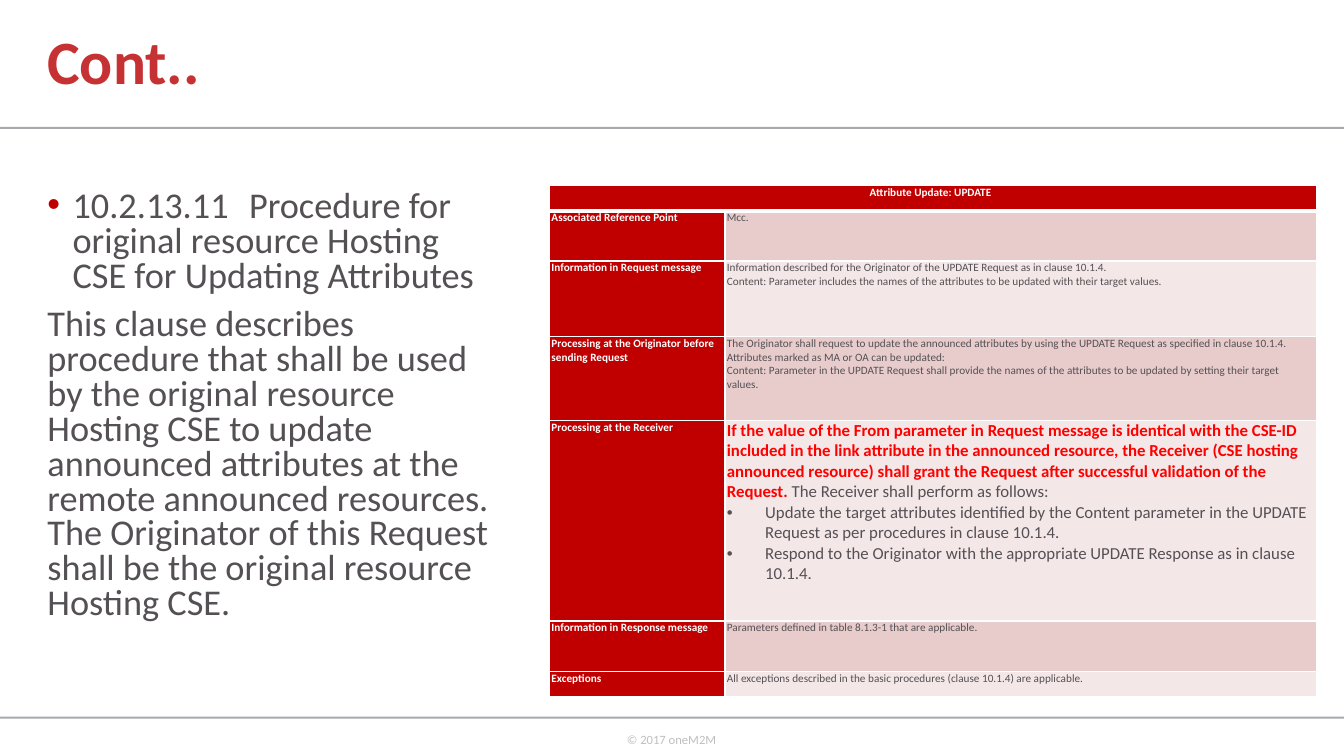
"""Build the slide on updating announced attributes."""
from lxml.etree import SubElement
from pptx import Presentation
from pptx.dml.color import RGBColor
from pptx.enum.shapes import MSO_SHAPE
from pptx.enum.text import MSO_ANCHOR, MSO_AUTO_SIZE, PP_ALIGN
from pptx.oxml import parse_xml
from pptx.oxml.ns import nsdecls, qn
from pptx.util import Inches, Pt

RED, GREY, WHITE, ALERT = "C00000", "545054", "FFFFFF", "FF0000"
BANDS = ["E8CCCC", "F4E7E7"]
TITLE = "Cont.."
BODY = [
    "10.2.13.11\tProcedure for original resource Hosting CSE for Updating Attributes",
    "This clause describes procedure that shall be used by the original resource Hosting CSE "
    "to update announced attributes at the remote announced resources. The Originator of this "
    "Request shall be the original resource Hosting CSE.",
]
FOOTER = "© 2017 oneM2M"
HEADER = "Attribute Update: UPDATE"
GRANT = (
    "If the value of the From parameter in Request message is identical with the CSE-ID included "
    "in the link attribute in the announced resource, the Receiver (CSE hosting announced "
    "resource) shall grant the Request after successful validation of the Request."
)
RECEIVER = "Processing at the Receiver"
ROWS = [
    ("Associated Reference Point", 0.5, ["Mcc."]),
    ("Information in Request message", 0.75, [
        "Information described for the Originator of the UPDATE Request as in clause 10.1.4.",
        "Content: Parameter includes the names of the attributes to be updated with their "
        "target values."]),
    ("Processing at the Originator before sending Request", 0.83, [
        "The Originator shall request to update the announced attributes by using the UPDATE "
        "Request as specified in clause 10.1.4. Attributes marked as MA or OA can be updated:",
        "Content: Parameter in the UPDATE Request shall provide the names of the attributes to "
        "be updated by setting their target values."]),
    (RECEIVER, 1.99, [
        " The Receiver shall perform as follows:",
        "Update the target attributes identified by the Content parameter in the UPDATE Request "
        "as per procedures in clause 10.1.4.",
        "Respond to the Originator with the appropriate UPDATE Response as in clause 10.1.4."]),
    ("Information in Response message", 0.5, [
        "Parameters defined in table 8.1.3-1 that are applicable."]),
    ("Exceptions", 0.25, [
        "All exceptions described in the basic procedures (clause 10.1.4) are applicable."]),
]
COLUMNS = [1.74, 5.87]
HEADER_HEIGHT = 0.25


def rgb(value):
    return RGBColor.from_string(value)


def style(r, size, color, bold=False):
    r.font.name, r.font.size, r.font.bold = "Calibri", Pt(size), bold
    r.font.color.rgb = rgb(color)


def place(sp, *box):
    sp.left, sp.top, sp.width, sp.height = map(Inches, box)


def set_bullet(p, indent, color=None, tab=None):
    pPr = p._p.get_or_add_pPr()
    pPr.set("marL", str(Inches(indent)))
    pPr.set("indent", str(-Inches(indent)))
    if not indent:
        SubElement(pPr, qn("a:buNone"))
        return
    if color:
        SubElement(SubElement(pPr, qn("a:buClr")), qn("a:srgbClr"), val=color)
    SubElement(pPr, qn("a:buFont"), typeface="Arial")
    SubElement(pPr, qn("a:buChar"), char="•")
    if tab:
        SubElement(SubElement(pPr, qn("a:tabLst")), qn("a:tab"), pos=str(Inches(tab)), algn="l")


def format_cell(cell, fill, bottom=1):
    cell.margin_left, cell.margin_right = Inches(0.02), Inches(0.07)
    cell.margin_top = cell.margin_bottom = 0
    cell.fill.solid()
    cell.fill.fore_color.rgb = rgb(fill)
    tcPr = cell._tc.get_or_add_tcPr()
    for i, (side, width) in enumerate([("L", 1), ("R", 1), ("T", 1), ("B", bottom)]):
        tcPr.insert(i, parse_xml(
            f'<a:ln{side} {nsdecls("a")} w="{Pt(width)}"><a:solidFill>'
            f'<a:srgbClr val="{WHITE}"/></a:solidFill></a:ln{side}>'))


def write_cell(cell, lines, size, color, bold=False):
    tf = cell.text_frame
    tf.text = "\n".join(lines)
    for p in tf.paragraphs:
        style(p.runs[0], size, color, bold)


def add_rule(s, top):
    sp = s.shapes.add_shape(MSO_SHAPE.RECTANGLE, 0, Inches(top), prs.slide_width, Inches(0.02))
    sp.shadow.inherit = False
    sp.fill.solid()
    sp.fill.fore_color.rgb = rgb("A7A9AC")
    sp.line.fill.background()


def add_footer(s):
    sp = s.shapes.add_textbox(Inches(6.12), Inches(7.21), Inches(1.1), Inches(0.4))
    tf = sp.text_frame
    tf.word_wrap = False
    tf.text = FOOTER
    style(tf.paragraphs[0].runs[0], 9, "BFBFBF")


def fill_title(s):
    sp = s.shapes.title
    place(sp, 0.37, 0, 8.59, 1.28)
    tf = sp.text_frame
    tf.text = TITLE
    tf.vertical_anchor = MSO_ANCHOR.MIDDLE
    p = tf.paragraphs[0]
    p.alignment, p.line_spacing = PP_ALIGN.LEFT, 0.9
    style(p.runs[0], 44, "C63133", True)


def fill_body(s):
    sp = s.placeholders[1]
    place(sp, 0.37, 1.84, 4.7, 4.76)
    tf = sp.text_frame
    tf.text = "\n".join(BODY)
    tf.auto_size = MSO_AUTO_SIZE.NONE
    for p, indent, before in zip(tf.paragraphs, [0.25, 0], [0, 10]):
        set_bullet(p, indent, RED)
        p.line_spacing, p.space_before = 0.8, Pt(before)
        for r in p.runs:
            style(r, 25.9, GREY)


def add_update_table(s):
    heights = [HEADER_HEIGHT] + [height for _, height, _ in ROWS]
    table = s.shapes.add_table(len(heights), 2, Inches(5.45), Inches(1.84),
                               Inches(sum(COLUMNS)), Inches(sum(heights))).table
    for column, width in zip(table.columns, COLUMNS):
        column.width = Inches(width)
    for row, height in zip(table.rows, heights):
        row.height = Inches(height)
    header = table.cell(0, 0)
    header.merge(table.cell(0, 1))
    for cell in table.rows[0].cells:
        format_cell(cell, RED, bottom=3)
    write_cell(header, [HEADER], 8, WHITE, True)
    header.text_frame.paragraphs[0].alignment = PP_ALIGN.CENTER
    for i, (label, _, lines) in enumerate(ROWS):
        name, detail = table.rows[i + 1].cells
        format_cell(name, RED)
        write_cell(name, [label], 8, WHITE, True)
        format_cell(detail, BANDS[i % 2])
        write_cell(detail, lines, 12 if label == RECEIVER else 8, GREY)
        if label == RECEIVER:
            add_receiver_details(detail.text_frame, lines[0])


def add_receiver_details(tf, closing):
    first, *steps = tf.paragraphs
    first.text = GRANT
    style(first.runs[0], 12, ALERT, True)
    r = first.add_run()
    r.text = closing
    style(r, 12, GREY)
    for p in steps:
        set_bullet(p, 0.38, tab=0.5)


prs = Presentation()
prs.slide_width, prs.slide_height = Inches(13.33), Inches(7.5)
s = prs.slides.add_slide(prs.slide_layouts[1])
for top in (1.26, 7.11):
    add_rule(s, top)
add_footer(s)
fill_title(s)
add_update_table(s)
fill_body(s)
prs.save("out.pptx")
